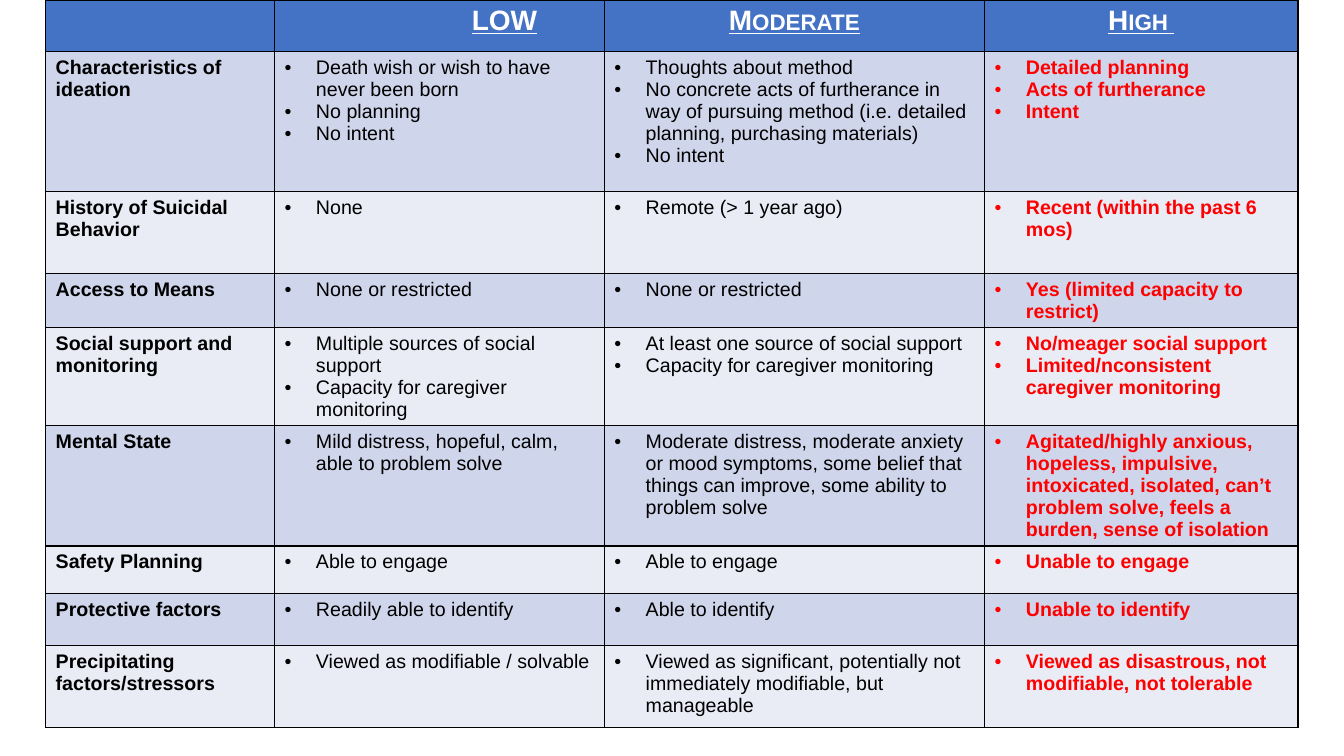
from lxml import etree
from pptx import Presentation
from pptx import util as u
from pptx.dml.color import RGBColor
from pptx.enum import text
from pptx.oxml import ns

BLACK = RGBColor(0x00, 0x00, 0x00)
WHITE = RGBColor(0xFF, 0xFF, 0xFF)
RED = RGBColor(0xFF, 0x00, 0x00)
BLUE = RGBColor(0x44, 0x72, 0xC4)
BANDS = RGBColor(0xCF, 0xD5, 0xEA), RGBColor(0xE9, 0xEB, 0xF5)

COLUMN_WIDTHS = 5.77, 8.31, 9.58, 7.9
ROW_HEIGHTS = 1.3, 3.53, 2.06, 1.19, 2.08, 2.67, 1.19, 1.32, 2.06

HEADER_FORMAT = {"name": "Arial", "size": u.Pt(20), "bold": True, "underline": True}
LABEL_FORMAT = {"name": "Arial", "size": u.Pt(14), "bold": True}
ITEM_FORMAT = {"name": "Arial", "size": u.Pt(14), "bold": False}
COLUMN_STYLES = (
    (LABEL_FORMAT, BLACK),
    (ITEM_FORMAT, BLACK),
    (ITEM_FORMAT, BLACK),
    (LABEL_FORMAT, RED),
)

HEADERS = "", "LOW", "Moderate", "High "
FACTORS = (
    ("Characteristics of ideation",
     ("Death wish or wish to have never been born", "No planning", "No intent"),
     ("Thoughts about method",
      "No concrete acts of furtherance in way of pursuing method "
      "(i.e. detailed planning, purchasing materials)",
      "No intent"),
     ("Detailed planning", "Acts of furtherance", "Intent")),
    ("History of Suicidal Behavior",
     ("None",),
     ("Remote (> 1 year ago)",),
     ("Recent (within the past 6 mos)",)),
    ("Access to Means",
     ("None or restricted",),
     ("None or restricted",),
     ("Yes (limited capacity to restrict)",)),
    ("Social support and monitoring",
     ("Multiple sources of social support", "Capacity for caregiver monitoring"),
     ("At least one source of social support", "Capacity for caregiver monitoring"),
     ("No/meager social support", "Limited/nconsistent caregiver monitoring")),
    ("Mental State",
     ("Mild distress, hopeful, calm, able to problem solve",),
     ("Moderate distress, moderate anxiety or mood symptoms, some belief that "
      "things can improve, some ability to problem solve",),
     ("Agitated/highly anxious, hopeless, impulsive, intoxicated, isolated, "
      "can’t problem solve, feels a burden, sense of isolation",)),
    ("Safety Planning",
     ("Able to engage",), ("Able to engage",), ("Unable to engage",)),
    ("Protective factors",
     ("Readily able to identify",), ("Able to identify",), ("Unable to identify",)),
    ("Precipitating factors/stressors",
     ("Viewed as modifiable / solvable",),
     ("Viewed as significant, potentially not immediately modifiable, "
      "but manageable",),
     ("Viewed as disastrous, not modifiable, not tolerable",)),
)


def add_element(parent, tag, **values):
    """Append a drawing element with the given attributes."""
    return etree.SubElement(parent, ns.qn(tag), values)


def paint_cell(cell, color):
    """Give a cell thin black borders and a solid fill."""
    properties = cell._tc.get_or_add_tcPr()
    for side in ("a:lnL", "a:lnR", "a:lnT", "a:lnB"):
        line = add_element(properties, side, w=str(u.Pt(1)))
        add_element(add_element(line, "a:solidFill"), "a:srgbClr", val=str(BLACK))
    cell.fill.solid()
    cell.fill.fore_color.rgb = color


def write_span(para, words, formats, color):
    """Add a formatted run to a paragraph and return it."""
    span = para.add_run()
    span.text = words
    for name, value in formats.items():
        setattr(span.font, name, value)
    span.font.color.rgb = color
    return span


def add_bullet(para):
    """Give a paragraph a hanging round bullet."""
    properties = para._p.get_or_add_pPr()
    properties.set("marL", str(u.Cm(0.79)))
    properties.set("indent", str(-u.Cm(0.79)))
    add_element(properties, "a:buFont", typeface="Arial")
    add_element(properties, "a:buChar", char="•")


def fill_header(cells):
    """Write the risk levels in underlined small capitals."""
    for cell, level in zip(cells, HEADERS):
        paint_cell(cell, BLUE)
        if level:
            para = cell.text_frame.paragraphs[0]
            para.alignment = text.PP_ALIGN.CENTER
            span = write_span(para, level, HEADER_FORMAT, WHITE)
            span._r.get_or_add_rPr().set("cap", "small")
    cells[1].text_frame.paragraphs[0]._p.get_or_add_pPr().set("marL", str(u.Cm(1.63)))


def fill_factor(cells, factor, band):
    """Write one risk factor with its bulleted signs for each level."""
    label, *levels = factor
    for cell, items, style in zip(cells, ((label,), *levels), COLUMN_STYLES):
        paint_cell(cell, band)
        frame = cell.text_frame
        for number, item in enumerate(items):
            para = frame.add_paragraph() if number else frame.paragraphs[0]
            if cell is not cells[0]:
                add_bullet(para)
            write_span(para, item, *style)


def add_risk_table(page):
    """Add the table of risk factors by level."""
    frame = page.shapes.add_table(
        len(ROW_HEIGHTS), len(COLUMN_WIDTHS), u.Cm(1.15), u.Cm(0),
        u.Cm(sum(COLUMN_WIDTHS)), u.Cm(sum(ROW_HEIGHTS)))
    table = frame.table
    for column, width in zip(table.columns, COLUMN_WIDTHS):
        column.width = u.Cm(width)
    for row, height in zip(table.rows, ROW_HEIGHTS):
        row.height = u.Cm(height)
    header, *body = [list(row.cells) for row in table.rows]
    fill_header(header)
    for number, (cells, factor) in enumerate(zip(body, FACTORS)):
        fill_factor(cells, factor, BANDS[number % 2])


def main():
    """Build the deck and save it."""
    deck = Presentation()
    deck.slide_width, deck.slide_height = u.Cm(33.87), u.Cm(19.05)
    page = deck.slides.add_slide(deck.slide_layouts[6])
    add_risk_table(page)
    deck.save("out.pptx")


if __name__ == "__main__":
    main()
